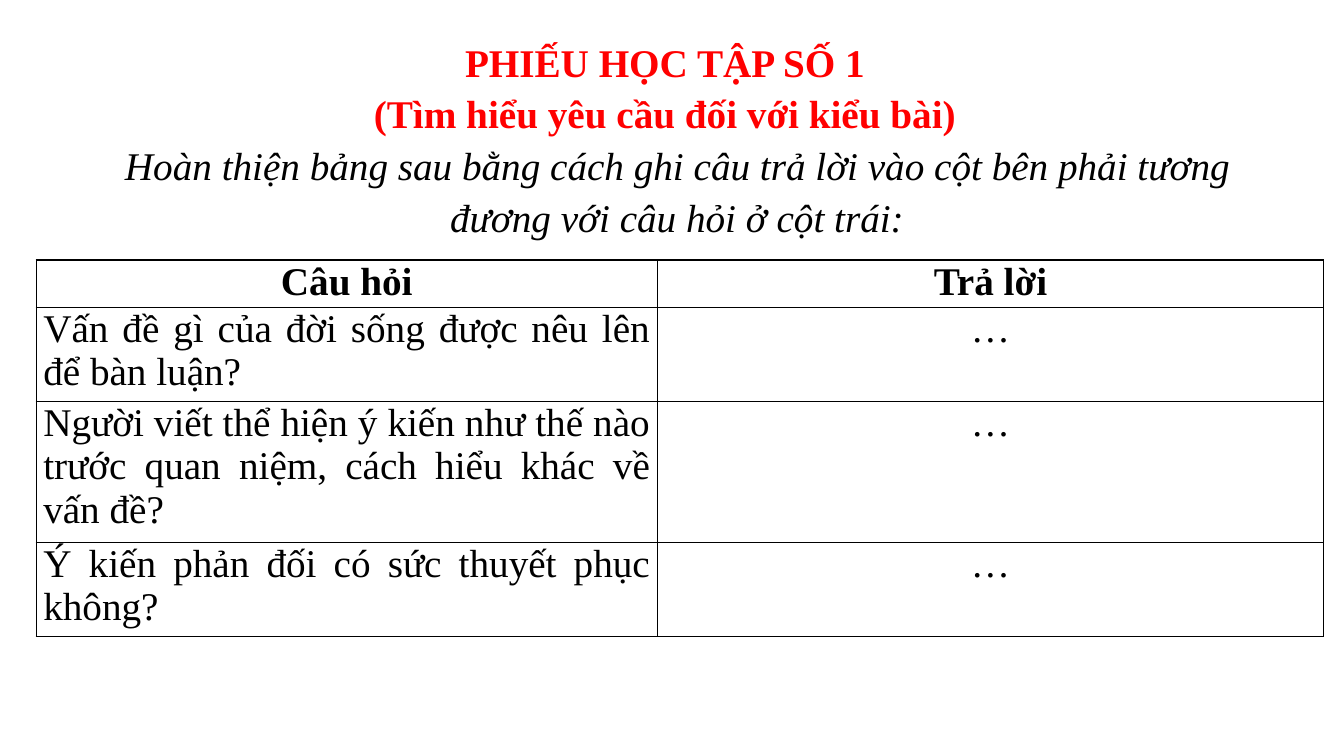
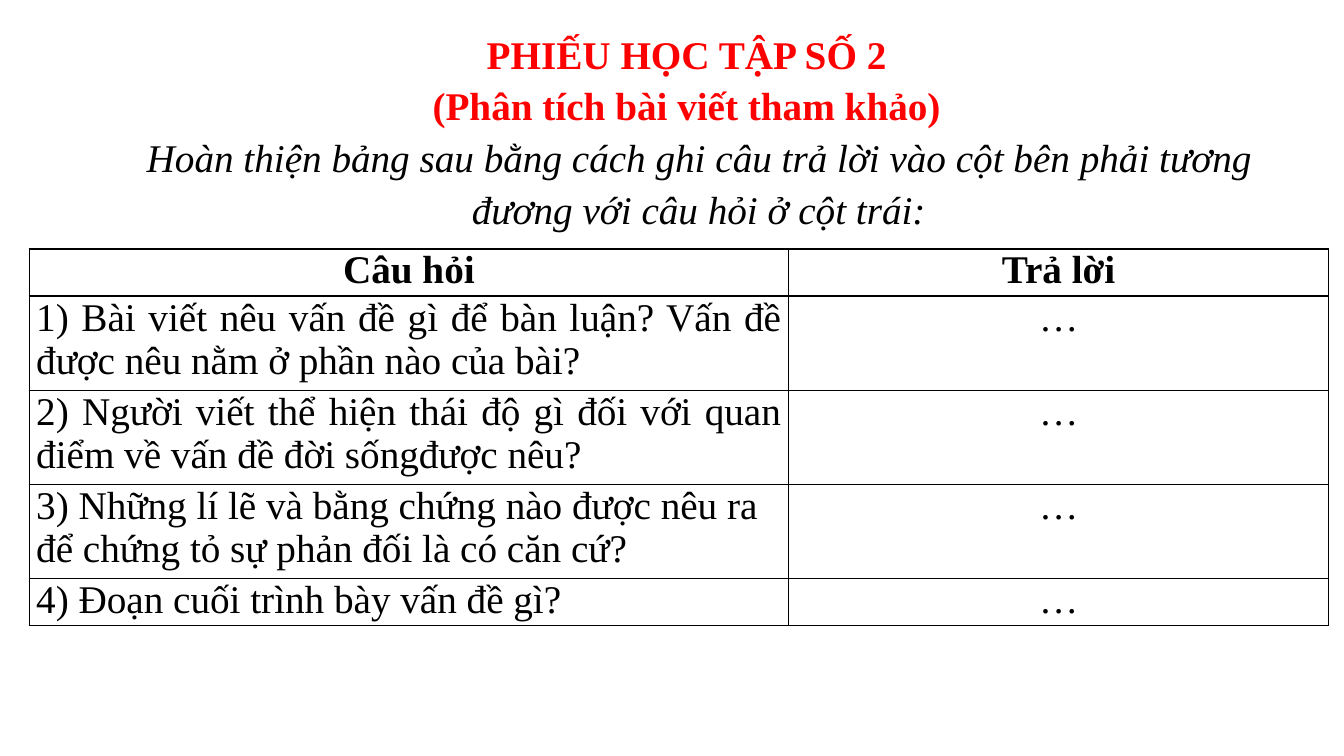
from lxml.etree import SubElement
from pptx import Presentation
from pptx.dml.color import RGBColor
from pptx.enum.text import MSO_ANCHOR, MSO_AUTO_SIZE, PP_ALIGN
from pptx.oxml.ns import qn
from pptx.util import Inches, Pt

RED, BLACK, WHITE = "FF0000", "000000", "FFFFFF"
FONT, SIZE = "Times New Roman", 28
WIDTH, HEIGHT = Inches(13.33), Inches(7.5)
COLUMN, ROW = WIDTH / 100, HEIGHT / 100
HEADING_RIGHT, HEADING_ROWS = 95.33, 26.53
LINE_ROWS = 6.22
INSTRUCTION = ("Hoàn thiện bảng sau bằng cách ghi câu trả lời vào cột bên phải "
               "tương đương với câu hỏi ở cột trái:")
JUSTIFIED, LEFT, CENTER = PP_ALIGN.JUSTIFY, PP_ALIGN.LEFT, PP_ALIGN.CENTER

WORKSHEETS = [
    {
        "heading": ["PHIẾU HỌC TẬP SỐ 1", "(Tìm hiểu yêu cầu đối với kiểu bài)"],
        "heading_at": (3.6, 3.73),
        "table_at": (2.7, 34.4),
        "columns": (46.2, 49.6),
        "questions": [
            ("Vấn đề gì của đời sống được nêu lên để bàn luận?", JUSTIFIED, 2),
            ("Người viết thể hiện ý kiến như thế nào trước quan niệm, "
             "cách hiểu khác về vấn đề?", JUSTIFIED, 3),
            ("Ý kiến phản đối có sức thuyết phục không?", JUSTIFIED, 2),
        ],
    },
    {
        "heading": ["PHIẾU HỌC TẬP SỐ 2", "(Phân tích bài viết tham khảo)"],
        "heading_at": (6.83, 2.67),
        "table_at": (2.17, 32.93),
        "columns": (56.5, 40.2),
        "questions": [
            ("1) Bài viết nêu vấn đề gì để bàn luận? "
             "Vấn đề được nêu nằm ở phần nào của bài?", JUSTIFIED, 2),
            ("2) Người viết thể hiện thái độ gì đối với quan điểm "
             "về vấn đề đời sốngđược nêu?", JUSTIFIED, 2),
            ("3) Những lí lẽ và bằng chứng nào được nêu ra "
             "để chứng tỏ sự phản đối là có căn cứ?", LEFT, 2),
            ("4) Đoạn cuối trình bày vấn đề gì?", LEFT, 1),
        ],
    },
]


def color(value):
    return RGBColor.from_string(value)


def style(paragraph, hex_color, align, bold=False, italic=False):
    paragraph.alignment = align
    font = paragraph.font
    font.name, font.size = FONT, Pt(SIZE)
    font.bold, font.italic = bold, italic
    font.color.rgb = color(hex_color)


deck = Presentation()
deck.slide_width, deck.slide_height = WIDTH, HEIGHT

for worksheet in WORKSHEETS:
    slide = deck.slides.add_slide(deck.slide_layouts[5])

    heading = slide.shapes.title
    left, top = worksheet["heading_at"]
    heading.left, heading.top = int(left * COLUMN), int(top * ROW)
    heading.width = int((HEADING_RIGHT - left) * COLUMN)
    heading.height = int(HEADING_ROWS * ROW)
    frame = heading.text_frame
    frame.text = "\n".join(worksheet["heading"] + [INSTRUCTION])
    frame.word_wrap = True
    frame.auto_size = MSO_AUTO_SIZE.SHAPE_TO_FIT_TEXT
    frame.vertical_anchor = MSO_ANCHOR.TOP
    *title_lines, instruction = frame.paragraphs
    for title_line in title_lines:
        style(title_line, RED, CENTER, bold=True)
    style(instruction, BLACK, CENTER, italic=True)
    instruction_format = instruction._p.get_or_add_pPr()
    instruction_format.set("marL", str(Inches(0.24)))
    instruction_format.set("indent", str(Inches(0.01)))
    for paragraph in frame.paragraphs:
        paragraph.line_spacing = 1.1

    entries = [("Câu hỏi", CENTER, 1, "Trả lời")]
    entries += [(*question, "…") for question in worksheet["questions"]]
    left, top = worksheet["table_at"]
    columns = worksheet["columns"]
    total_lines = sum(entry[2] for entry in entries)
    table = slide.shapes.add_table(
        len(entries), len(columns), int(left * COLUMN), int(top * ROW),
        int(sum(columns) * COLUMN), int(total_lines * LINE_ROWS * ROW)).table
    table.first_row = table.horz_banding = False
    for table_column, share in zip(table.columns, columns):
        table_column.width = int(share * COLUMN)

    for index, (question, align, lines, answer) in enumerate(entries):
        table.rows[index].height = int(lines * LINE_ROWS * ROW)
        for cell, text, cell_align in zip(
                table.rows[index].cells, (question, answer), (align, CENTER)):
            cell.text = text
            style(cell.text_frame.paragraphs[0], BLACK, cell_align, bold=index == 0)
            cell.margin_left = cell.margin_right = Inches(0.07)
            cell.margin_top = cell.margin_bottom = 0
            borders = cell._tc.get_or_add_tcPr()
            for side in ("a:lnL", "a:lnR", "a:lnT", "a:lnB"):
                border = SubElement(borders, qn(side), w=str(Pt(1)))
                border_fill = SubElement(border, qn("a:solidFill"))
                SubElement(border_fill, qn("a:srgbClr"), val=BLACK)
            cell.fill.solid()
            cell.fill.fore_color.rgb = color(WHITE)

deck.save("out.pptx")
